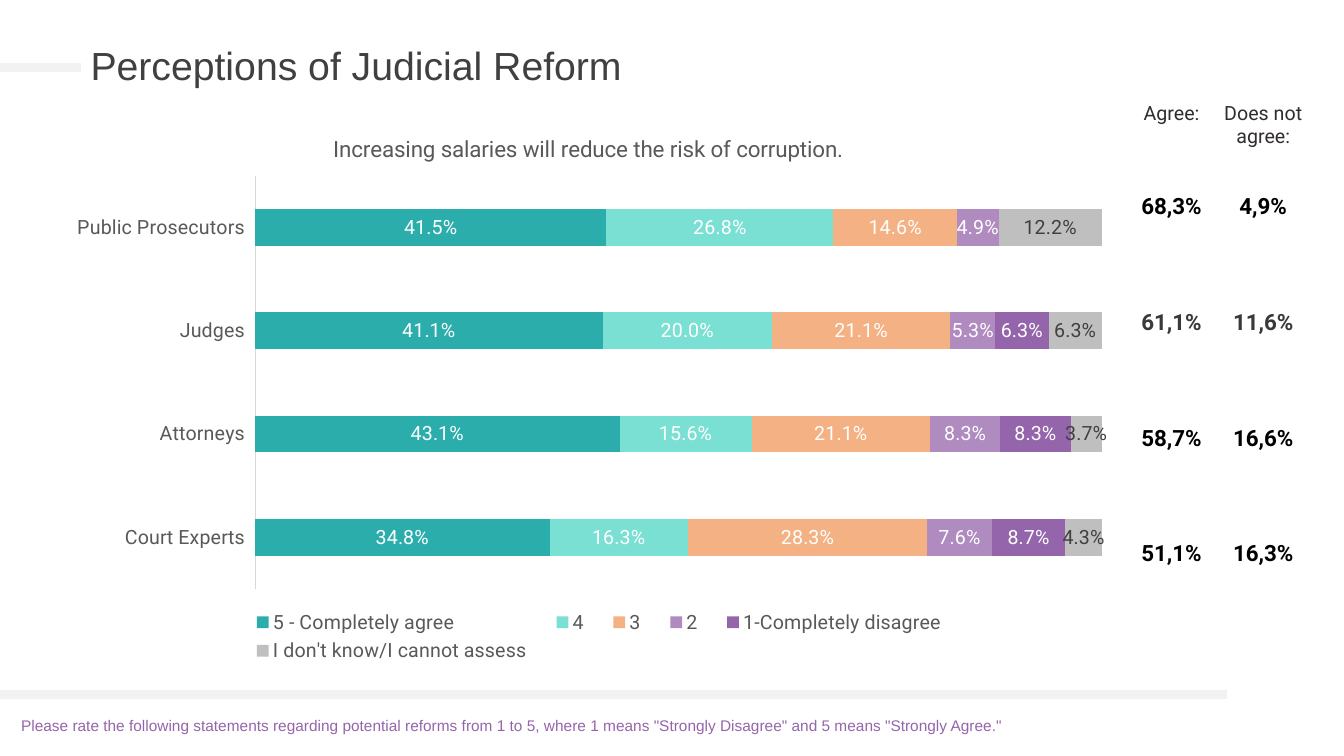
from lxml.etree import SubElement
from pptx import Presentation
from pptx.chart.data import CategoryChartData
from pptx.dml.color import RGBColor
from pptx.enum.chart import XL_CHART_TYPE, XL_LEGEND_POSITION, XL_TICK_LABEL_POSITION, XL_TICK_MARK
from pptx.enum.shapes import MSO_CONNECTOR
from pptx.enum.text import MSO_ANCHOR, PP_ALIGN
from pptx.oxml import parse_xml
from pptx.oxml.ns import nsdecls, qn
from pptx.util import Inches, Pt

# Content
TITLE = "Perceptions of Judicial Reform"
QUESTION = "Increasing salaries will reduce the risk of corruption."
NOTE = ('Please rate the following statements regarding potential reforms from 1 to 5, '
        'where 1 means "Strongly Disagree" and 5 means "Strongly Agree."')
GROUPS = ["Public Prosecutors", "Judges", "Attorneys", "Court Experts"]
ANSWERS = [  # name, values, bar colour, label colour
    ("5 - Completely agree", [0.415, 0.411, 0.431, 0.348], "2BAEAB", "FFFFFF"),
    ("4", [0.268, 0.2, 0.156, 0.163], "7AE0D4", "FFFFFF"),
    ("3", [0.146, 0.211, 0.211, 0.283], "F4B183", "FFFFFF"),
    ("2", [0.049, 0.053, 0.083, 0.076], "AF8BBF", "FFFFFF"),
    ("1-Completely disagree", [0, 0.063, 0.083, 0.087], "9565AB", "FFFFFF"),
    ("I don't know/I cannot assess", [0.122, 0.063, 0.037, 0.043], "BFBFBF", "404040"),
]
TOTALS = [("Agree:", "Does not agree:"), ("68,3%", "4,9%"), ("61,1%", "11,6%"),
          ("58,7%", "16,6%"), ("51,1%", "16,3%")]
TOTAL_COLORS = ["312C30", "000000", "3A3838", "000000", "000000"]


def color(value):
    return RGBColor.from_string(value)


def style_font(font, size, hue, name="Roboto", bold=False):
    font.size, font.name, font.bold = Pt(size), name, bold
    font.color.rgb = color(hue)


def write(frame, text, align=PP_ALIGN.LEFT, spacing=None, **style):
    paragraph = frame.paragraphs[0]
    paragraph.alignment = align
    if spacing:
        paragraph.line_spacing = spacing
    run = paragraph.add_run()
    run.text = text
    style_font(run.font, **style)


def place(parent, x, y, width=None, height=None, inner=False):
    """Fix a chart part at shares of the chart's size."""
    for old in parent.findall(qn("c:layout")):
        parent.remove(old)
    layout = parse_xml(f"<c:layout {nsdecls('c')}><c:manualLayout/></c:layout>")
    manual = layout[0]
    entries = [("layoutTarget", "inner")] if inner else []
    entries += [("xMode", "edge"), ("yMode", "edge"), ("x", x), ("y", y)]
    if width:
        entries += [("w", width), ("h", height)]
    for tag, value in entries:
        SubElement(manual, qn(f"c:{tag}")).set("val", str(value))
    return layout


class SlideBuilder:
    """Places elements on a grid of 100 columns by 100 rows."""
    band = "F2F2F2"
    body = "595959"

    def __init__(self, presentation):
        self.column = presentation.slide_width / 100
        self.row = presentation.slide_height / 100
        self.slide = presentation.slides.add_slide(presentation.slide_layouts[6])

    def box(self, left, top, width, height):
        return (round(left * self.column), round(top * self.row),
                round(width * self.column), round(height * self.row))

    def rule(self, top, width):
        x, y, length, _ = self.box(0, top, width, 0)
        line = self.slide.shapes.add_connector(MSO_CONNECTOR.STRAIGHT, x, y, x + length, y)
        line.line.color.rgb = color(self.band)
        line.line.width = Pt(6)
        SubElement(line._element.spPr, qn("a:effectLst"))

    def text(self, area, text, anchor=MSO_ANCHOR.TOP, **style):
        frame = self.slide.shapes.add_textbox(*self.box(*area)).text_frame
        frame.word_wrap = True
        frame.vertical_anchor = anchor
        write(frame, text, **style)

    def table(self, left, top, widths, heights, rows, hues):
        area = self.box(left, top, sum(widths), sum(heights))
        table = self.slide.shapes.add_table(len(rows), len(widths), *area).table
        table.first_row = table.horz_banding = False
        for column, width in zip(table.columns, widths):
            column.width = round(width * self.column)
        for r, (texts, hue) in enumerate(zip(rows, hues)):
            table.rows[r].height = round(heights[r] * self.row)
            for c, text in enumerate(texts):
                cell = table.cell(r, c)
                cell.fill.background()
                cell.margin_left = cell.margin_right = cell.margin_top = Inches(0.01)
                cell.margin_bottom = 0
                cell.vertical_anchor = MSO_ANCHOR.MIDDLE if r else MSO_ANCHOR.BOTTOM
                write(cell.text_frame, text, align=PP_ALIGN.CENTER,
                      size=16 if r else 14, hue=hue, bold=r > 0)
        # Level with the first line of the two-line heading beside it
        table.cell(0, 0).margin_bottom = Inches(0.23)

    def chart(self, area, title, categories, answers):
        data = CategoryChartData(number_format="0.0%")
        data.categories = categories
        for name, values, _, _ in answers:
            data.add_series(name, values)
        chart = self.slide.shapes.add_chart(
            XL_CHART_TYPE.BAR_STACKED_100, *self.box(*area), data).chart
        style_font(chart.font, 14, "000000")

        # Title and legend
        write(chart.chart_title.text_frame, title, align=PP_ALIGN.CENTER, size=16, hue=self.body)
        title_element = chart.chart_title._element
        title_element.find(qn("c:tx")).addnext(place(title_element, 0.25, 0.04))
        chart.chart_title.include_in_layout = False
        chart.has_legend = True
        legend = chart.legend
        legend.position = XL_LEGEND_POSITION.BOTTOM
        legend.include_in_layout = False
        style_font(legend.font, 14, self.body)
        legend_element = legend._element
        legend_element.find(qn("c:legendPos")).addnext(
            place(legend_element, 0.16, 0.89, 0.69, 0.11))

        # Axes
        groups, shares = chart.category_axis, chart.value_axis
        groups.reverse_order = True
        groups.major_tick_mark = groups.minor_tick_mark = XL_TICK_MARK.NONE
        groups.tick_label_position = XL_TICK_LABEL_POSITION.LOW
        style_font(groups.tick_labels.font, 14, self.body)
        groups.format.line.color.rgb = color("D9D9D9")
        groups.format.line.width = Pt(0.75)
        shares.has_major_gridlines = False
        shares.tick_labels.number_format = "0.0%"
        shares.tick_labels.number_format_is_linked = False
        shares.visible = False

        # Bars
        plot = chart.plots[0]
        plot.gap_width, plot.overlap, plot.vary_by_categories = 182, 100, False
        plot_area = chart._chartSpace.chart.plotArea
        plot_area.insert(0, place(plot_area, 0.18, 0.12, 0.8, 0.74, inner=True))
        for series, (_, values, bar_hue, label_hue) in zip(plot.series, answers):
            series.format.fill.solid()
            series.format.fill.fore_color.rgb = color(bar_hue)
            labels = series.data_labels
            labels.show_value = True
            labels.number_format, labels.number_format_is_linked = "0.0%", False
            style_font(labels.font, 14, label_hue)
            for index, value in enumerate(values):
                if value == 0:
                    labels._element.insert(0, parse_xml(
                        f'<c:dLbl {nsdecls("c")}><c:idx val="{index}"/>'
                        '<c:delete val="1"/></c:dLbl>'))


def main():
    presentation = Presentation()
    presentation.slide_width, presentation.slide_height = Inches(13.33), Inches(7.5)
    builder = SlideBuilder(presentation)

    # Heading and bands
    builder.rule(8.93, 6)
    builder.text((6, 3.07, 91.2, 11.73), TITLE, anchor=MSO_ANCHOR.MIDDLE,
                 spacing=0.9, size=28, hue="404040", name="Arial")
    builder.rule(91.87, 91.3)

    # Totals, note and chart
    builder.table(83.57, 4.67, [7.2, 6.45], [14.93] + [15.33] * 4, TOTALS, TOTAL_COLORS)
    builder.text((0.83, 94.13, 79.9, 3.87), NOTE, size=11, hue="9565AB", name="Arial")
    builder.chart((4.8, 14.4, 78.77, 73.87), QUESTION, GROUPS, ANSWERS)
    presentation.save("out.pptx")


if __name__ == "__main__":
    main()
